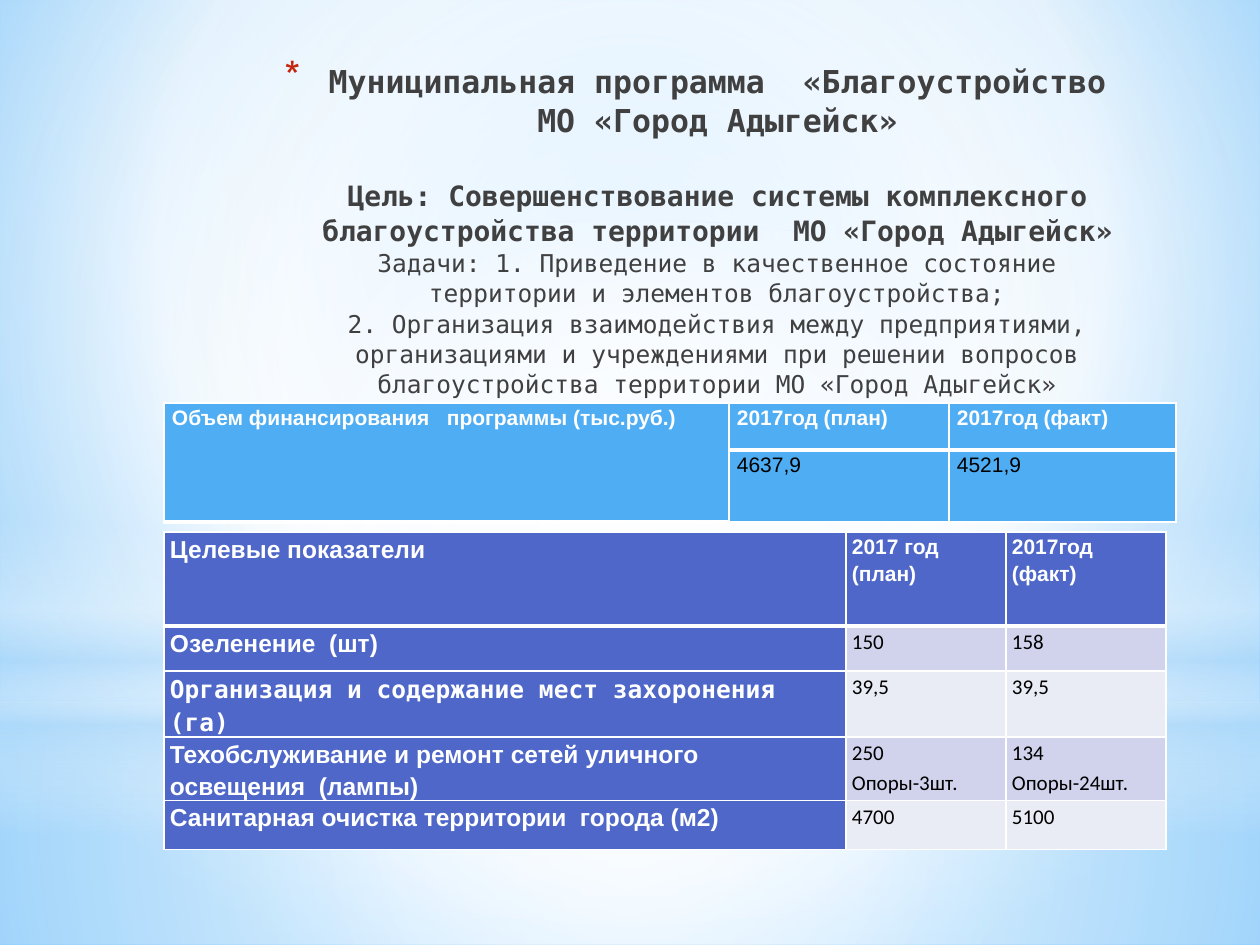
from copy import deepcopy
from dataclasses import dataclass

from lxml import etree
from pptx import Presentation
from pptx import util as u
from pptx.dml.color import RGBColor
from pptx.enum import shapes, text
from pptx.oxml.ns import qn


@dataclass(frozen=True)
class Theme:
    white: str = "FFFFFF"
    black: str = "000000"
    ink: str = "404040"
    bullet: str = "C3260C"
    mist: str = "B4DCFA"
    sky: str = "4FADF3"
    indigo: str = "4E67C8"
    bands: tuple = ("D0D3EB", "E9EBF5")
    sans: str = "Arial"
    value_font: str = "Calibri"
    mono: str = "DejaVu Sans Mono"
    heading: int = 18
    goal: int = 16
    label: int = 14
    small: int = 12


T = Theme()
HEADER = dict(name=T.sans, size=T.small, bold=True, color=T.white)
LABEL = {**HEADER, "size": T.label}
MONO_LABEL = {**LABEL, "name": T.mono}
AMOUNT = {**HEADER, "bold": False, "color": T.black}
VALUE = {**AMOUNT, "name": T.value_font}


def px(length):
    return u.Emu(round(length * 914400 / 126))


def child(parent, tag, **attributes):
    values = {key: str(value) for key, value in attributes.items()}
    return etree.SubElement(parent, qn(tag), values)


def format_font(font, style):
    style = dict(style)
    font.color.rgb = RGBColor.from_string(style.pop("color"))
    style["size"] = u.Pt(style["size"])
    for key, value in style.items():
        setattr(font, key, value)


def fill_gradient(fill, owner, stops, focus=None):
    """Stops are (position, colour, opacity); no focus means top to bottom."""
    fill.gradient()
    gradient = next(owner.iter(qn("a:gradFill")))
    for part in list(gradient):
        gradient.remove(part)
    stop_list = child(gradient, "a:gsLst")
    for position, colour, opacity in stops:
        stop = child(stop_list, "a:gs", pos=position * 1000)
        tint = child(stop, "a:srgbClr", val=colour)
        if opacity < 100:
            child(tint, "a:alpha", val=opacity * 1000)
    if focus:
        circle = child(gradient, "a:path", path="circle")
        edges = {side: value * 1000 for side, value in zip("ltrb", focus)}
        child(circle, "a:fillToRect", **edges)
    else:
        child(gradient, "a:lin", ang=90 * 60000, scaled=0)


def add_glow(slide, kind, top, height, stops, focus=None):
    glow = slide.shapes.add_shape(kind, 0, px(top), px(1260), px(height))
    glow.shadow.inherit = False
    glow.line.fill.background()
    fill_gradient(glow.fill, glow.element, stops, focus)


def add_backdrop(slide):
    fill_gradient(slide.background.fill, slide.element,
                  [(0, "9ED5FF", 100), (60, T.white, 100), (100, "5BB9FF", 100)],
                  (20, 10, 20, 60))
    rectangle, oval = shapes.MSO_SHAPE.RECTANGLE, shapes.MSO_SHAPE.OVAL
    centre = (50, 50, 50, 50)
    add_glow(slide, rectangle, 703, 242,
             [(0, T.white, 91), (37, T.white, 76), (100, T.mist, 79)], centre)
    add_glow(slide, rectangle, 0, 703,
             [(0, T.white, 89), (48, T.white, 62), (100, T.mist, 79)], centre)
    add_glow(slide, rectangle, 519, 315,
             [(0, T.white, 0), (29, T.white, 30), (45, T.mist, 40),
              (55, T.white, 26), (65, T.mist, 60), (100, T.white, 0)])
    add_glow(slide, oval, 221, 703, [(0, T.white, 100), (56, T.white, 0)], centre)


def add_bullet(paragraph, hang):
    properties = paragraph._p.get_or_add_pPr()
    properties.set("marL", str(px(hang)))
    properties.set("indent", str(px(-hang)))
    child(child(properties, "a:buClr"), "a:srgbClr", val=T.bullet)
    child(properties, "a:buSzPct", val=128000)
    child(properties, "a:buChar", char="*")


def write_title(slide, parts):
    """Parts are (line, size, bold, breaks after the line)."""
    title = slide.shapes.title
    slide.shapes._spTree.append(title.element)
    place = dict(left=247, top=55, width=897, height=129)
    for side, length in place.items():
        setattr(title, side, px(length))
    frame = title.text_frame
    frame.word_wrap = True
    frame.auto_size = text.MSO_AUTO_SIZE.NONE
    frame.vertical_anchor = text.MSO_ANCHOR.TOP
    paragraph = frame.paragraphs[0]
    paragraph.alignment = text.PP_ALIGN.CENTER
    paragraph.line_spacing = 1.03
    add_bullet(paragraph, 44)
    for line, size, bold, breaks in parts:
        run = paragraph.add_run()
        run.text = line
        format_font(run.font, dict(name=T.mono, size=size, bold=bold, color=T.ink))
        for _ in range(breaks):
            paragraph.add_line_break()
            paragraph._p[-1].append(deepcopy(run._r.rPr))


def draw_borders(cell, row):
    """White grid with a heavy rule under the header row."""
    heavy = {0: "B", 1: "T"}.get(row)
    for side in "LRTB":
        width = u.Pt(3 if side == heavy else 1)
        line = child(cell._tc.get_or_add_tcPr(), f"a:ln{side}", w=int(width))
        child(child(line, "a:solidFill"), "a:srgbClr", val=T.white)


def write_cell(cell, content, style, inset):
    cell.margin_left = cell.margin_right = px(inset)
    cell.margin_top = cell.margin_bottom = 0
    frame = cell.text_frame
    for index, line in enumerate(content.split("\n")):
        paragraph = frame.add_paragraph() if index else frame.paragraphs[0]
        paragraph.line_spacing = 1.15
        run = paragraph.add_run()
        run.text = line
        format_font(run.font, style)


def add_grid(slide, top, columns, heights, rows, inset):
    """Rows hold (content, style, fill); None content leaves the cell empty."""
    table = slide.shapes.add_table(len(heights), len(columns), px(164), px(top),
                                   px(sum(columns)), px(sum(heights))).table
    for column, width in zip(table.columns, columns):
        column.width = px(width)
    for row, height in zip(table.rows, heights):
        row.height = px(height)
    for r, row in enumerate(rows):
        for c, (content, style, fill) in enumerate(row):
            cell = table.cell(r, c)
            draw_borders(cell, r)
            cell.fill.solid()
            cell.fill.fore_color.rgb = RGBColor.from_string(fill)
            if content is not None:
                write_cell(cell, content, style, inset)
    return table


def add_funding(slide):
    headers = ["Объем финансирования   программы (тыс.руб.)",
               "2017год (план)", "2017год (факт)"]
    amounts = [None, "4637,9", "4521,9"]
    rows = [[(content, style, T.sky) for content in row]
            for row, style in ((headers, HEADER), (amounts, AMOUNT))]
    table = add_grid(slide, 403, [565, 220, 227], [47, 72], rows, 8)
    table.cell(0, 0).merge(table.cell(1, 0))


def add_indicators(slide):
    indicators = [
        ("Озеленение  (шт)", LABEL, "150", "158"),
        ("Организация и содержание мест захоронения (га)", MONO_LABEL, "39,5", "39,5"),
        ("Техобслуживание и ремонт сетей уличного освещения  (лампы)", LABEL,
         "250\nОпоры-3шт.", "134\nОпоры-24шт."),
        ("Санитарная очистка территории  города (м2)", LABEL, "4700", "5100"),
    ]
    rows = [[("Целевые показатели", LABEL, T.indigo),
             ("2017 год\n(план)", HEADER, T.indigo),
             ("2017год\n(факт)", HEADER, T.indigo)]]
    for index, (name, style, plan, fact) in enumerate(indicators):
        band = T.bands[index % 2]
        rows.append([(name, style, T.indigo), (plan, VALUE, band), (fact, VALUE, band)])
    add_grid(slide, 532, [682, 160, 160], [94, 45, 59, 59, 49], rows, 6)


def main():
    deck = Presentation()
    deck.slide_width, deck.slide_height = px(1260), px(945)
    slide = deck.slides.add_slide(deck.slide_layouts.get_by_name("Title Only"))
    add_backdrop(slide)
    write_title(slide, [
        ("Муниципальная программа  «Благоустройство МО «Город Адыгейск»",
         T.heading, True, 2),
        ("Цель: Совершенствование системы комплексного благоустройства "
         "территории  МО «Город Адыгейск»", T.goal, True, 1),
        ("Задачи: 1. Приведение в качественное состояние территории и "
         "элементов благоустройства;", T.label, False, 1),
        ("2. Организация взаимодействия между предприятиями, организациями и "
         "учреждениями при решении вопросов благоустройства территории "
         "МО «Город Адыгейск»", T.label, False, 0),
    ])
    add_funding(slide)
    add_indicators(slide)
    deck.save("out.pptx")


if __name__ == "__main__":
    main()
